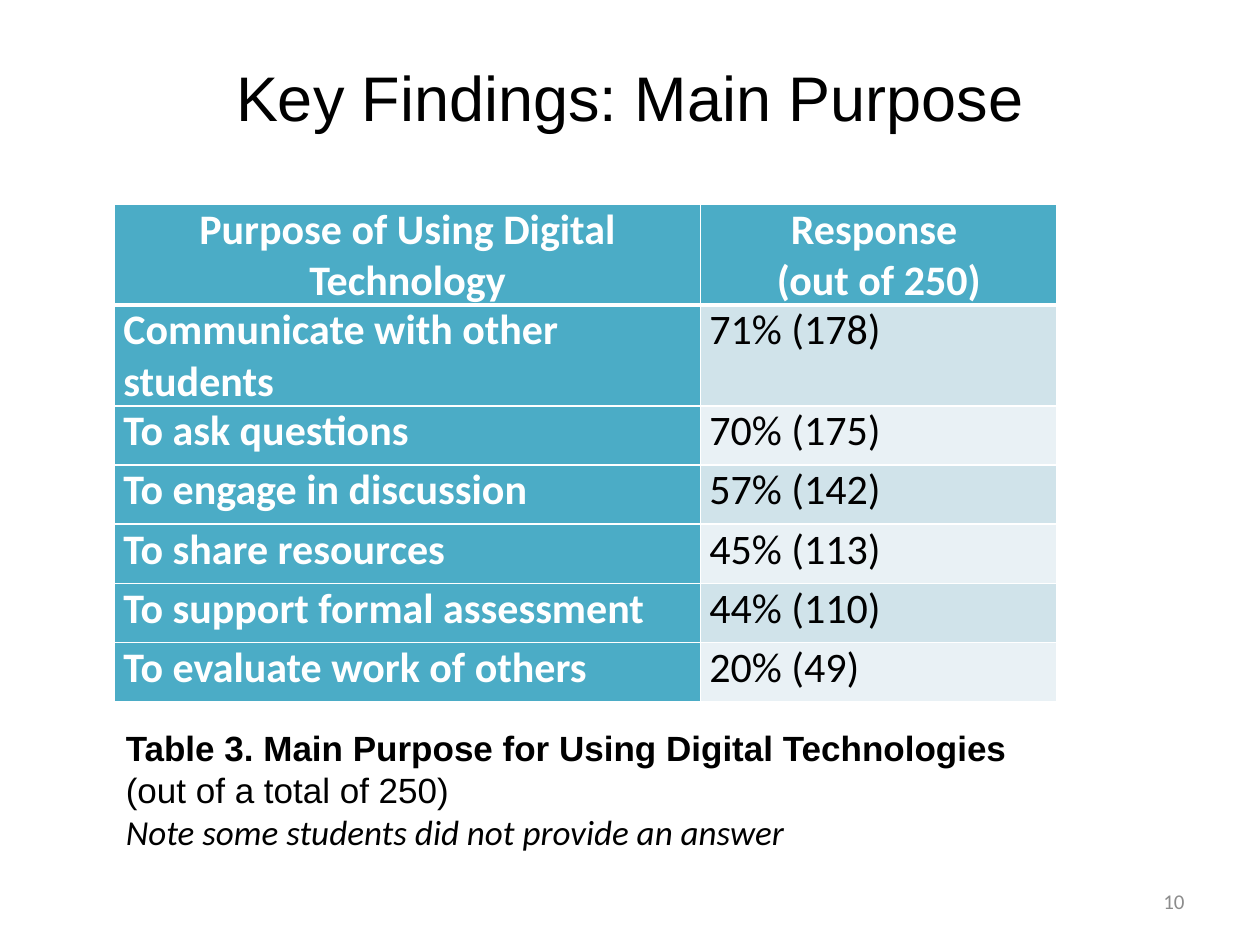
from dataclasses import dataclass

from lxml import etree
from pptx import Presentation
from pptx import util as u
from pptx.dml.color import RGBColor
from pptx.enum import text
from pptx.oxml import ns

BLACK, WHITE, GREY, TEAL = "000000", "FFFFFF", "8C8C8C", "4BACC6"
BANDS = ("D0E3EA", "E9F1F5")
LEFT, CENTER, RIGHT, JUSTIFY = (
    text.PP_ALIGN.LEFT, text.PP_ALIGN.CENTER, text.PP_ALIGN.RIGHT, text.PP_ALIGN.JUSTIFY)


@dataclass
class Line:
    words: str
    size: int
    font: str = "Calibri"
    color: str = BLACK
    bold: bool = False
    italic: bool = False
    align: text.PP_ALIGN = LEFT


@dataclass
class Purpose:
    name: str
    response: str


PURPOSES = [
    Purpose("Communicate with other students", "71% (178)"),
    Purpose("To ask questions", "70% (175)"),
    Purpose("To engage in discussion", "57% (142)"),
    Purpose("To share resources", "45% (113)"),
    Purpose("To support formal assessment", "44% (110)"),
    Purpose("To evaluate work of others", "20% (49)"),
]


def rgb(value: str) -> RGBColor:
    return RGBColor.from_string(value)


def write(tf, lines: list[Line]) -> None:
    for i, line in enumerate(lines):
        p = tf.paragraphs[0] if i == 0 else tf.add_paragraph()
        p.text = line.words
        p.alignment = line.align
        f = p.font
        f.name, f.size, f.bold, f.italic = line.font, u.Pt(line.size), line.bold, line.italic
        f.color.rgb = rgb(line.color)


def add_text(s, left: float, top: float, width: float, height: float,
             lines: list[Line]) -> None:
    tf = s.shapes.add_textbox(*map(u.Inches, (left, top, width, height))).text_frame
    tf.word_wrap = True
    tf.vertical_anchor = text.MSO_ANCHOR.MIDDLE
    write(tf, lines)


def add_border(cell, side: str, points: float) -> None:
    """Draw a white line on one side: L, R, T or B."""
    ln = etree.SubElement(cell._tc.get_or_add_tcPr(), ns.qn(f"a:ln{side}"), w=str(u.Pt(points)))
    fill = etree.SubElement(ln, ns.qn("a:solidFill"))
    etree.SubElement(fill, ns.qn("a:srgbClr"), val=WHITE)


def fill_cell(cell, fill: str, lines: list[Line], top: float = 1, bottom: float = 1) -> None:
    cell.margin_left = cell.margin_right = u.Inches(0.07)
    cell.margin_top = cell.margin_bottom = 0
    for side, points in zip("LRTB", (1, 1, top, bottom)):
        add_border(cell, side, points)
    cell.fill.solid()
    cell.fill.fore_color.rgb = rgb(fill)
    write(cell.text_frame, lines)


def add_purpose_table(s) -> None:
    rows = len(PURPOSES) + 1
    table = s.shapes.add_table(rows, 2, u.Inches(0.91), u.Inches(1.62),
                               u.Inches(7.48), u.Inches(0.47 * rows)).table
    for column, width in zip(table.columns, (4.65, 2.83)):
        column.width = u.Inches(width)

    headings = (["Purpose of Using Digital Technology"], ["Response ", "(out of 250)"])
    for col, words in enumerate(headings):
        fill_cell(table.cell(0, col), TEAL,
                  [Line(w, 24, color=WHITE, bold=True, align=CENTER) for w in words], bottom=3)

    for row, purpose in enumerate(PURPOSES, 1):
        top = 3 if row == 1 else 1
        fill_cell(table.cell(row, 0), TEAL,
                  [Line(purpose.name, 24, color=WHITE, bold=True)], top)
        fill_cell(table.cell(row, 1), BANDS[(row - 1) % 2],
                  [Line(purpose.response, 24, align=JUSTIFY)], top)


def main() -> None:
    prs = Presentation()
    prs.slide_width, prs.slide_height = u.Inches(10), u.Inches(7.5)
    s = prs.slides.add_slide(prs.slide_layouts[6])
    add_text(s, 0.5, 0.3, 9, 0.93,
             [Line("Key Findings: Main Purpose", 36, "Arial", align=CENTER)])
    add_text(s, 7.17, 6.95, 2.33, 0.4, [Line("10", 12, color=GREY, align=RIGHT)])
    add_text(s, 0.9, 5.71, 8.59, 1.11, [
        Line("Table 3. Main Purpose for Using Digital Technologies", 20, "Arial", bold=True),
        Line("(out of a total of 250)", 20, "Arial"),
        Line("Note some students did not provide an answer", 20, italic=True),
    ])
    add_purpose_table(s)
    prs.save("out.pptx")


if __name__ == "__main__":
    main()
